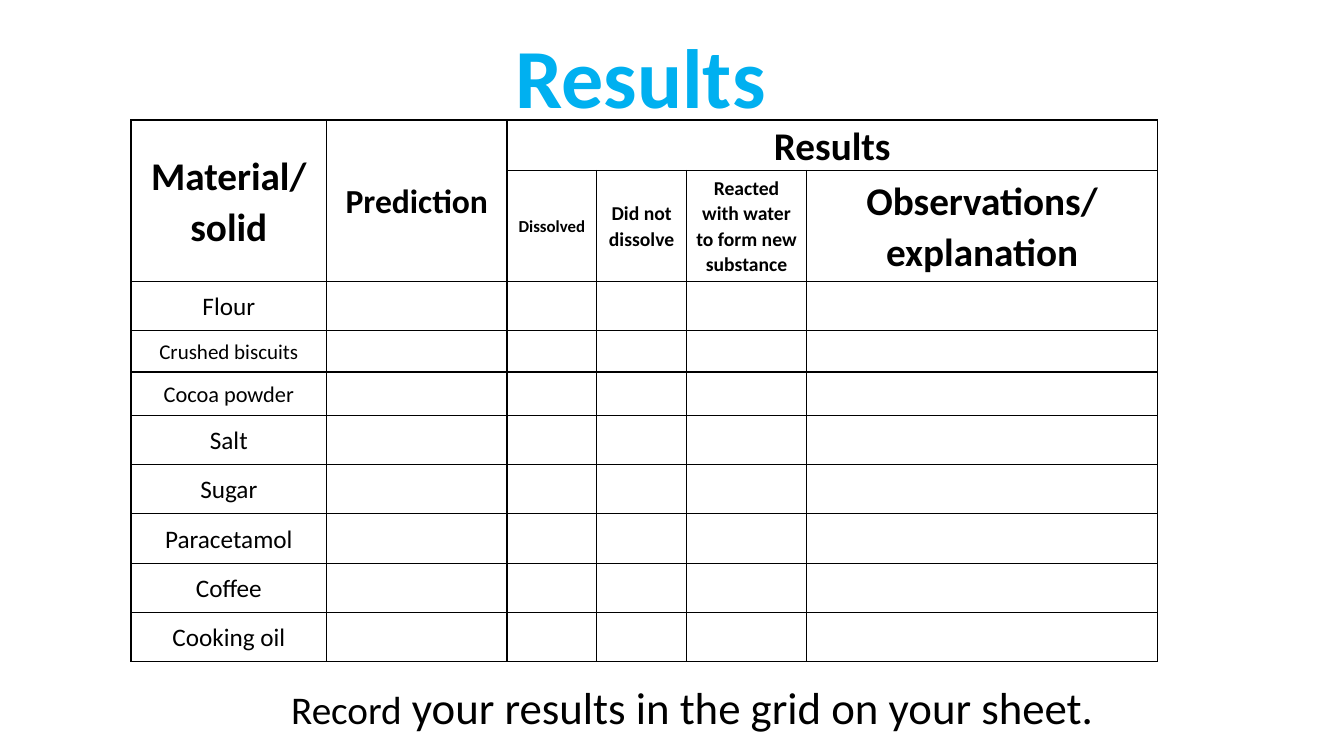
from lxml import etree
from pptx import Presentation
from pptx.dml.color import RGBColor
from pptx.enum.text import MSO_ANCHOR, MSO_AUTO_SIZE, PP_ALIGN
from pptx.oxml.ns import qn
from pptx.util import Inches, Pt

CENTER, LEFT = PP_ALIGN.CENTER, PP_ALIGN.LEFT
MIDDLE, TOP = MSO_ANCHOR.MIDDLE, MSO_ANCHOR.TOP
GROW, NO_FIT = MSO_AUTO_SIZE.SHAPE_TO_FIT_TEXT, MSO_AUTO_SIZE.NONE
TITLE_ONLY = 5
BLACK = RGBColor(0x00, 0x00, 0x00)
SKY = RGBColor(0x00, 0xB0, 0xF0)

# Column widths and row heights, in percent of the slide
COLUMNS = [14.55, 13.43, 6.68, 6.68, 8.93, 26.11]
HEADER_ROWS = [6.67, 14.67]
PLAIN_ROW = 6.53

# Header cells: row, column, rows spanned, columns spanned, lines, size, space after
HEADERS = [
    (0, 0, 2, 1, ["Material/ solid"], 28, 8),
    (0, 1, 2, 1, ["Prediction"], 24, 8),
    (0, 2, 1, 4, ["Results"], 28, 8),
    (1, 2, 1, 1, ["Dissolved"], 12, 0),
    (1, 3, 1, 1, ["Did not dissolve"], 14, 0),
    (1, 4, 1, 1, ["Reacted with water to form new substance"], 14, 0),
    (1, 5, 1, 1, ["Observations/", "explanation"], 28, 0),
]

# Materials: name, text size, row height
MATERIALS = [
    ("Flour", 18, PLAIN_ROW),
    ("Crushed biscuits", 15, 5.47),
    ("Cocoa powder", 16, 5.73),
    ("Salt", 18, PLAIN_ROW),
    ("Sugar", 18, PLAIN_ROW),
    ("Paracetamol", 18, PLAIN_ROW),
    ("Coffee", 18, PLAIN_ROW),
    ("Cooking oil", 18, PLAIN_ROW),
]


def apply(target, values):
    for name, value in values.items():
        setattr(target, name, value)


class Sheet:
    """Holds the style and the current page; lengths are percent of the slide."""

    font_name = "Calibri"
    cell_format = {"margin_left": Inches(0.07), "margin_right": Inches(0.07),
                   "margin_top": 0, "margin_bottom": 0, "vertical_anchor": MIDDLE}

    def __init__(self, deck):
        self.width, self.height = deck.slide_width, deck.slide_height
        self.page = deck.slides.add_slide(deck.slide_layouts[TITLE_ONLY])

    def across(self, share):
        return round(self.width * share / 100)

    def down(self, share):
        return round(self.height * share / 100)

    def area(self, left, top, width, height):
        return self.across(left), self.down(top), self.across(width), self.down(height)

    def add_spans(self, para, spans, color=BLACK, bold=False, **layout):
        apply(para, layout)
        for text, size in spans:
            span = para.add_run()
            span.text = text
            apply(span.font, {"name": self.font_name, "size": Pt(size), "bold": bold})
            span.font.color.rgb = color

    def title(self, text, size, area):
        box = self.page.shapes.title
        apply(box, dict(zip(("left", "top", "width", "height"), self.area(*area))))
        apply(box.text_frame, {"vertical_anchor": MIDDLE, "word_wrap": True,
                               "auto_size": NO_FIT})
        self.add_spans(box.text_frame.paragraphs[0], [(text, size)], SKY, True,
                       alignment=CENTER, line_spacing=0.9)

    def text(self, spans, area):
        box = self.page.shapes.add_textbox(*self.area(*area))
        apply(box.text_frame, {"word_wrap": True, "auto_size": GROW,
                               "vertical_anchor": TOP})
        self.add_spans(box.text_frame.paragraphs[0], spans, alignment=LEFT)

    def table(self, left, top, columns, rows):
        area = self.area(left, top, sum(columns), sum(rows))
        table = self.page.shapes.add_table(len(rows), len(columns), *area).table
        apply(table, {"first_row": False, "horz_banding": False})
        for column, share in zip(table.columns, columns):
            column.width = self.across(share)
        for row, share in zip(table.rows, rows):
            row.height = self.down(share)
        for cell in table.iter_cells():
            apply(cell, self.cell_format)
            cell.fill.background()
            self.border(cell)
        return table

    def border(self, cell):
        properties = cell._tc.get_or_add_tcPr()
        for index, side in enumerate(("a:lnL", "a:lnR", "a:lnT", "a:lnB")):
            line = etree.Element(qn(side), w=str(Pt(1)))
            fill = etree.SubElement(line, qn("a:solidFill"))
            etree.SubElement(fill, qn("a:srgbClr"), val=str(BLACK))
            properties.insert(index, line)

    def fill_cell(self, cell, lines, size, bold=False, after=0):
        frame = cell.text_frame
        for index, text in enumerate(lines):
            para = frame.add_paragraph() if index else frame.paragraphs[0]
            self.add_spans(para, [(text, size)], bold=bold, alignment=CENTER,
                           line_spacing=1.07, space_after=Pt(after))


def main():
    deck = Presentation()
    deck.slide_width, deck.slide_height = Inches(13.33), Inches(7.5)
    sheet = Sheet(deck)

    # Title and instruction
    sheet.title("Results", 60, (32.56, 4, 30.23, 13.47))
    sheet.text([("Record", 28), (" your results in the grid on your sheet.", 32)],
               (20.93, 89.2, 65.12, 8.53))

    # Results grid
    rows = HEADER_ROWS + [height for _, _, height in MATERIALS]
    grid = sheet.table(9.75, 15.87, COLUMNS, rows)
    for row, column, tall, wide, lines, size, after in HEADERS:
        cell = grid.cell(row, column)
        if tall * wide > 1:
            cell.merge(grid.cell(row + tall - 1, column + wide - 1))
        sheet.fill_cell(cell, lines, size, True, after)
    for row, (name, size, _) in enumerate(MATERIALS, len(HEADER_ROWS)):
        sheet.fill_cell(grid.cell(row, 0), [name], size)

    deck.save("out.pptx")


if __name__ == "__main__":
    main()
